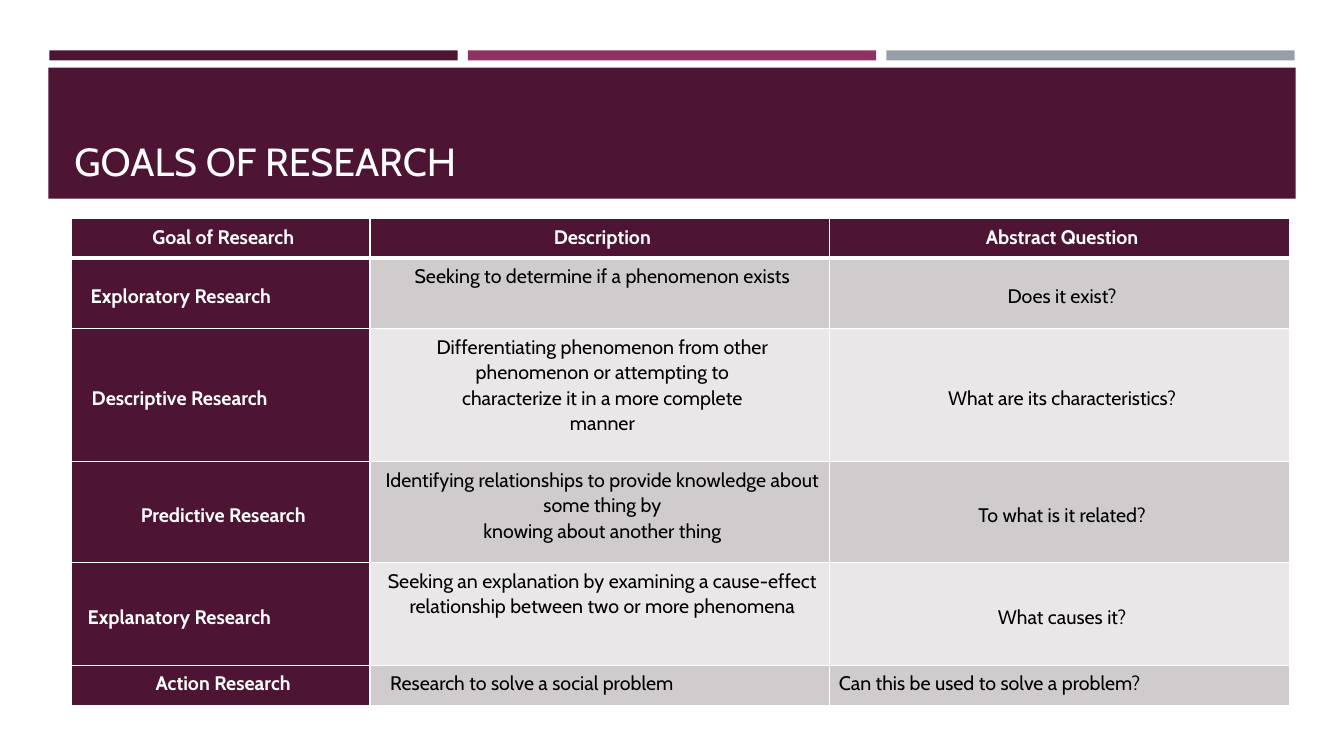
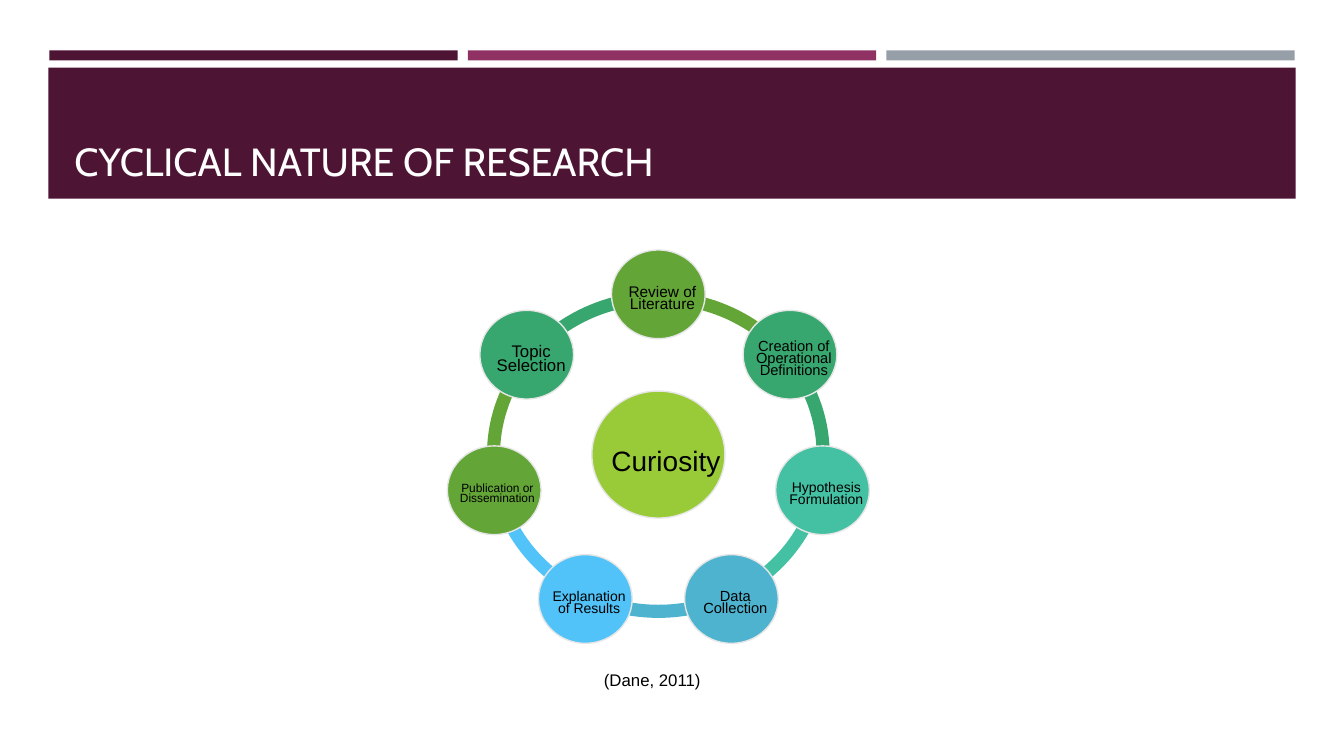
import math

import lxml.etree
import pptx
import pptx.dml.color
import pptx.enum.shapes
import pptx.enum.text
import pptx.oxml.ns
import pptx.util

Inches = pptx.util.Inches
Pt = pptx.util.Pt
ALIGN = pptx.enum.text.PP_ALIGN
ANCHOR = pptx.enum.text.MSO_ANCHOR
PRESET = pptx.enum.shapes.MSO_SHAPE

COLORS = {
    "plum": "4D1434", "magenta": "903163", "slate": "969FA7",
    "white": "FFFFFF", "black": "000000", "outline": "E6E6E6",
    "row_dark": "D0CCCE", "row_light": "E9E7E8",
    "lime": "99CB38", "green": "63A537", "jade": "37A76F",
    "teal": "44C1A3", "blue": "4EB3CF", "sky": "51C3F9",
}
TITLE_FONT = "Cabin"
DIAGRAM_FONT = "Arial"

COLUMN_WIDTHS = [2.96, 4.56, 4.56]
ROW_HEIGHTS = [0.39, 0.7, 1.32, 1, 1.02, 0.4]
GOALS = [
    ("Goal of Research", "Description", "Abstract Question"),
    ("Exploratory Research", "Seeking to determine if a phenomenon exists",
     "Does it exist?"),
    ("Descriptive Research",
     "Differentiating phenomenon from other phenomenon or attempting to\n"
     "characterize it in a more complete\nmanner",
     "What are its characteristics?"),
    ("Predictive Research",
     "Identifying relationships to provide knowledge about some thing by\n"
     "knowing about another thing",
     "To what is it related?"),
    ("Explanatory Research",
     "Seeking an explanation by examining a cause-effect relationship "
     "between two or more phenomena",
     "What causes it?"),
    ("Action Research", "Research to solve a social problem",
     "Can this be used to solve a problem?"),
]
# Cells (row, column) that are set flush left, with their indent in inches
LEFT_INDENTS = {(1, 0): 0.11, (2, 0): 0.12, (4, 0): 0.08,
                (5, 1): 0.12, (5, 2): 0.01}

# Clockwise from the top: text, size, colour
STAGES = [
    ("Review of\nLiterature", 11, "green"),
    ("Creation of\nOperational\nDefinitions", 10.5, "jade"),
    ("Hypothesis\nFormulation", 10, "teal"),
    ("Data\nCollection", 10.5, "blue"),
    ("Explanation\nof Results", 10, "sky"),
    ("Publication or\nDissemination", 8.5, "green"),
    ("Topic\nSelection", 12, "jade"),
]
CENTER = (6.53, 4.51)
RING_OUTER = (1.7, 1.62)
RING_INNER = (1.57, 1.49)
STAGE_ORBIT = (1.67, 1.59)


def rgb(name):
    return pptx.dml.color.RGBColor.from_string(COLORS[name])


def write_text(frame, text, *, size, font, color="black", bold=False,
               align=ALIGN.LEFT, spacing=None, indent=0):
    """Fill a text frame, one paragraph per line of text."""
    for index, line in enumerate(text.split("\n")):
        para = frame.add_paragraph() if index else frame.paragraphs[0]
        para.alignment = align
        if spacing:
            para.line_spacing = spacing
        if indent:
            para._p.get_or_add_pPr().set("marL", str(Inches(indent)))
        span = para.add_run()
        span.text = line
        span.font.size = Pt(size)
        span.font.name = font
        span.font.bold = bold
        span.font.color.rgb = rgb(color)


def set_margins(target, left, top, right, bottom):
    target.margin_left, target.margin_top = Inches(left), Inches(top)
    target.margin_right, target.margin_bottom = Inches(right), Inches(bottom)


def paint(shape, fill, line=None):
    shape.shadow.inherit = False
    shape.fill.solid()
    shape.fill.fore_color.rgb = rgb(fill)
    if line:
        shape.line.color.rgb = rgb(line)
        shape.line.width = Pt(1)
    else:
        shape.line.fill.background()


def add_preset(page, preset, left, top, width, height, fill, line=None):
    shape = page.shapes.add_shape(preset, Inches(left), Inches(top),
                                  Inches(width), Inches(height))
    paint(shape, fill, line)
    return shape


def add_text_box(page, left, top, width, height, text, *, margins,
                 anchor=ANCHOR.TOP, **text_format):
    box = page.shapes.add_textbox(Inches(left), Inches(top),
                                  Inches(width), Inches(height))
    frame = box.text_frame
    frame.word_wrap = True
    frame.vertical_anchor = anchor
    set_margins(frame, *margins)
    write_text(frame, text, **text_format)


def add_titled_page(deck, title):
    """Add a blank page with the three bars, the title band and its title."""
    page = deck.slides.add_slide(deck.slide_layouts[6])
    for index, color in enumerate(("plum", "magenta", "slate")):
        add_preset(page, PRESET.RECTANGLE, 0.49 + index * 4.15, 0.5,
                   4.05, 0.1, color)
    add_preset(page, PRESET.RECTANGLE, 0.48, 0.67, 12.37, 1.3, "plum")
    add_text_box(page, 0.64, 0.77, 12.06, 1.11, title,
                 margins=(0.1, 0.05, 0.1, 0.05), anchor=ANCHOR.BOTTOM,
                 size=28, font=TITLE_FONT, color="white")
    return page


def set_borders(cell, **widths):
    """Draw white cell borders; widths in points by side (L, R, T, B)."""
    properties = cell._tc.get_or_add_tcPr()
    qn = pptx.oxml.ns.qn
    for index, side in enumerate("LRTB"):
        line = lxml.etree.Element(qn("a:ln" + side),
                                  w=str(Pt(widths.get(side, 1))))
        fill = lxml.etree.SubElement(line, qn("a:solidFill"))
        lxml.etree.SubElement(fill, qn("a:srgbClr"), val=COLORS["white"])
        properties.insert(index, line)


def fill_goal_cell(cell, text, row, column):
    is_label = row == 0 or column == 0
    is_top = column == 1 or row in (0, len(GOALS) - 1)
    indent = LEFT_INDENTS.get((row, column), 0)
    cell.fill.solid()
    cell.fill.fore_color.rgb = rgb(
        "plum" if is_label else "row_dark" if row % 2 else "row_light")
    set_borders(cell, T=3 if row == 1 else 1, B=3 if row == 0 else 1)
    set_margins(cell, 0.08, 0.05, 0.03, 0)
    cell.vertical_anchor = ANCHOR.TOP if is_top else ANCHOR.MIDDLE
    write_text(cell.text_frame, text, size=14, font=TITLE_FONT,
               color="white" if is_label else "black", bold=is_label,
               align=ALIGN.LEFT if indent else ALIGN.CENTER,
               spacing=1.07, indent=indent)


def add_goal_table(page):
    frame = page.shapes.add_table(
        len(GOALS), len(COLUMN_WIDTHS), Inches(0.71), Inches(2.17),
        Inches(sum(COLUMN_WIDTHS)), Inches(sum(ROW_HEIGHTS)))
    table = frame.table
    table.horz_banding = False
    for column, width in zip(table.columns, COLUMN_WIDTHS):
        column.width = Inches(width)
    for row, height in zip(table.rows, ROW_HEIGHTS):
        row.height = Inches(height)
    for row, texts in enumerate(GOALS):
        for column, text in enumerate(texts):
            fill_goal_cell(table.cell(row, column), text, row, column)


def orbit_point(radii, turn):
    """Point on an ellipse round CENTER; turn is clockwise from the top."""
    angle = 2 * math.pi * turn
    return (CENTER[0] + radii[0] * math.sin(angle),
            CENTER[1] - radii[1] * math.cos(angle))


def add_ring_segment(page, start, end, color, steps=24):
    turns = [start + (end - start) * step / steps for step in range(steps + 1)]
    points = [orbit_point(RING_OUTER, turn) for turn in turns]
    points += [orbit_point(RING_INNER, turn) for turn in reversed(turns)]
    # Whole EMU, because the builder rounds its coordinates to integers
    corners = [(Inches(x), Inches(y)) for x, y in points]
    builder = page.shapes.build_freeform(*corners[0])
    builder.add_line_segments(corners[1:], close=True)
    paint(builder.convert_to_shape(), color)


def add_disc(page, center, width, height, text, size, color):
    """Add an outlined disc whose label sits slightly right of and below center."""
    disc = add_preset(page, PRESET.OVAL, center[0] - width / 2,
                      center[1] - height / 2, width, height, color, "outline")
    frame = disc.text_frame
    frame.word_wrap = False
    frame.vertical_anchor = ANCHOR.MIDDLE
    set_margins(frame, 0.0075 * size, 0.0105 * size, 0, 0)
    write_text(frame, text, size=size, font=DIAGRAM_FONT,
               align=ALIGN.CENTER, spacing=Pt(0.84 * size))


def add_research_cycle(page):
    count = len(STAGES)
    for index, (_, _, color) in enumerate(STAGES):
        add_ring_segment(page, index / count, (index + 1) / count, color)
    add_disc(page, CENTER, 1.32, 1.26, "Curiosity", 20, "lime")
    for index, (text, size, color) in enumerate(STAGES):
        add_disc(page, orbit_point(STAGE_ORBIT, index / count), 0.93, 0.88,
                 text, size, color)


def main():
    deck = pptx.Presentation()
    deck.slide_width, deck.slide_height = Inches(13.33), Inches(7.5)

    add_goal_table(add_titled_page(deck, "GOALS OF RESEARCH"))

    cycle_page = add_titled_page(deck, "CYCLICAL NATURE OF RESEARCH")
    add_research_cycle(cycle_page)
    add_text_box(cycle_page, 5.99, 6.63, 1.2, 0.27, "(Dane, 2011)",
                 margins=(0, 0, 0, 0), size=12, font=DIAGRAM_FONT,
                 spacing=1.07)

    deck.save("out.pptx")


if __name__ == "__main__":
    main()
